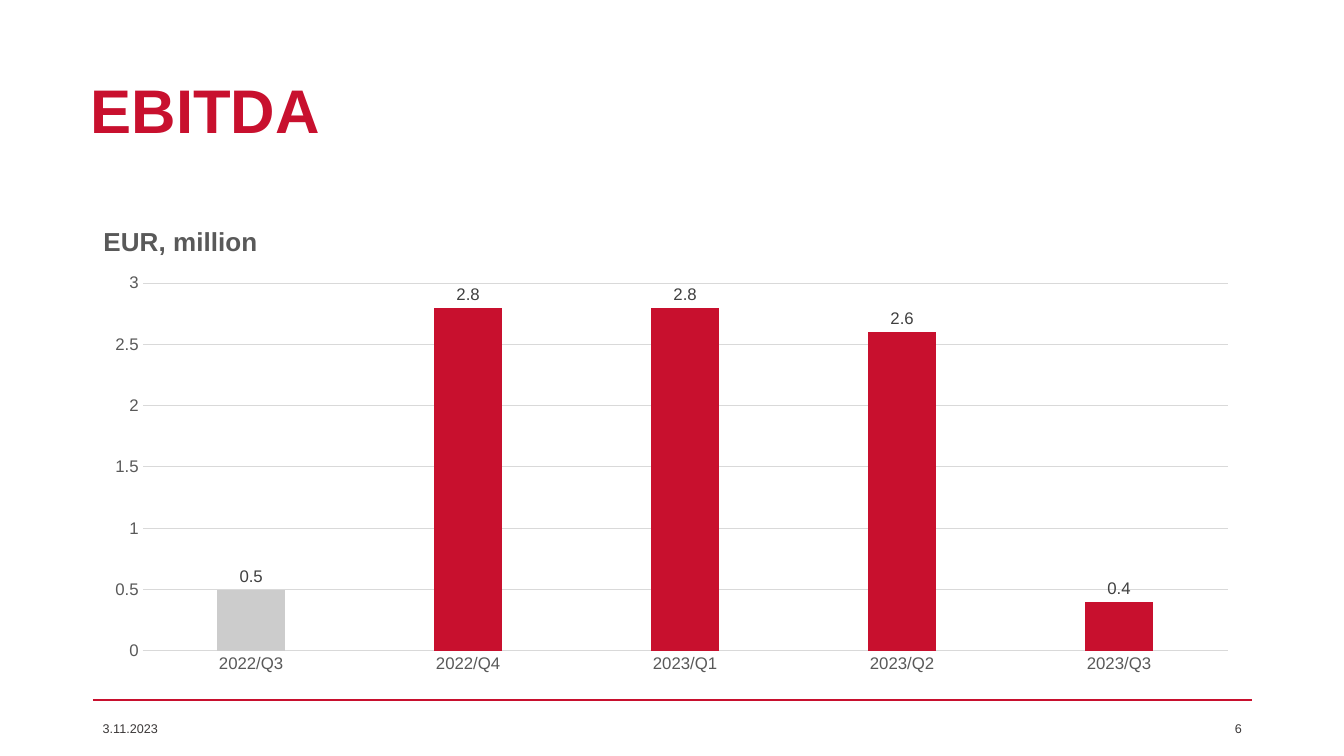
from lxml.etree import SubElement
from pptx import Presentation
from pptx.chart.data import CategoryChartData
from pptx.dml.color import RGBColor
from pptx.enum.chart import XL_CHART_TYPE as ChartType
from pptx.enum.chart import XL_LABEL_POSITION as LabelPosition
from pptx.enum.chart import XL_TICK_MARK as TickMark
from pptx.enum.shapes import MSO_CONNECTOR as Connector
from pptx.enum.text import MSO_ANCHOR as Anchor
from pptx.enum.text import MSO_AUTO_SIZE as AutoSize
from pptx.enum.text import PP_ALIGN as Align
from pptx.oxml.ns import qn
from pptx.util import Cm, Pt

HEADING = "EBITDA"
UNIT = "EUR, million"
EBITDA = {"2022/Q3": 0.5, "2022/Q4": 2.8, "2023/Q1": 2.8, "2023/Q2": 2.6, "2023/Q3": 0.4}
FOOTER = [("3.11.2023", Align.LEFT), ("6", Align.RIGHT)]
COLORS = {"red": "C8102E", "past": "CCCCCC", "grid": "D9D9D9", "axis": "595959",
          "label": "404040", "footer": "3B3838"}
FONT = "Arial"
LEFT, WIDTH = Cm(2.34), Cm(29.21)
RULE_Y = Cm(17.63)
FOOTER_WIDTH = Cm(7.62)


def color(name):
    return RGBColor.from_string(COLORS[name])


def style(font, size, name, bold=False):
    font.name, font.size, font.bold = FONT, Pt(size), bold
    font.color.rgb = color(name)


def place(parent, index, **fractions):
    for old in parent.findall(qn("c:layout")):
        parent.remove(old)
    layout = SubElement(parent, qn("c:layout"))
    parent.insert(index, layout)
    manual = SubElement(layout, qn("c:manualLayout"))
    if "w" in fractions:
        SubElement(manual, qn("c:layoutTarget")).set("val", "inner")
    for side in "xy":
        SubElement(manual, qn(f"c:{side}Mode")).set("val", "edge")
    for side, fraction in fractions.items():
        SubElement(manual, qn(f"c:{side}")).set("val", str(fraction))


def add_heading(slide):
    heading = slide.shapes.title
    heading.left, heading.top, heading.width, heading.height = Cm(2.03), Cm(1.02), Cm(29.21), Cm(3.68)
    frame = heading.text_frame
    frame.text = HEADING
    frame.auto_size, frame.vertical_anchor = AutoSize.NONE, Anchor.MIDDLE
    paragraph = frame.paragraphs[0]
    paragraph.alignment, paragraph.line_spacing = Align.LEFT, 0.9
    style(paragraph.runs[0].font, 44, "red", True)


def add_footer(slide):
    rule = slide.shapes.add_connector(Connector.STRAIGHT, LEFT, RULE_Y, LEFT + WIDTH, RULE_Y)
    rule.line.color.rgb, rule.line.width = color("red"), Pt(1.25)
    SubElement(rule._element.spPr, qn("a:effectLst"))
    for column, (text, alignment) in enumerate(FOOTER):
        left = LEFT + column * (WIDTH - FOOTER_WIDTH)
        frame = slide.shapes.add_textbox(left, Cm(17.65), FOOTER_WIDTH, Cm(1.4)).text_frame
        frame.text = text
        frame.word_wrap, frame.vertical_anchor = True, Anchor.MIDDLE
        frame.paragraphs[0].alignment = alignment
        style(frame.paragraphs[0].runs[0].font, 9, "footer")


def add_ebitda_chart(slide):
    quarters = CategoryChartData()
    quarters.categories = list(EBITDA)
    quarters.add_series("Series 1", list(EBITDA.values()))
    chart = slide.shapes.add_chart(
        ChartType.COLUMN_CLUSTERED, LEFT, Cm(5.16), WIDTH, Cm(12.04), quarters).chart
    style(chart.font, 12, "axis")
    chart.has_legend = False

    unit = chart.chart_title
    unit.text_frame.text = UNIT
    style(unit.text_frame.paragraphs[0].runs[0].font, 18.6, "axis", True)
    place(unit._element, 1, x=0.005, y=0.03)
    place(chart._chartSpace.chart.plotArea, 0, x=0.043, y=0.164, w=0.936, h=0.77)

    for axis in (chart.category_axis, chart.value_axis):
        axis.major_tick_mark = axis.minor_tick_mark = TickMark.NONE
        style(axis.tick_labels.font, 12, "axis")
    values = chart.value_axis
    values.minimum_scale, values.maximum_scale, values.major_unit = 0, 3, 0.5
    values.tick_labels.number_format = "General"
    values.tick_labels.number_format_is_linked = False
    values.format.line.fill.background()
    for line in (chart.category_axis.format.line, values.major_gridlines.format.line):
        line.color.rgb, line.width = color("grid"), Pt(0.75)

    plot = chart.plots[0]
    plot.gap_width, plot.overlap, plot.vary_by_categories = 219, -27, False
    bars = plot.series[0]
    for fill, name in ((bars.format.fill, "red"), (bars.points[0].format.fill, "past")):
        fill.solid()
        fill.fore_color.rgb = color(name)
    labels = bars.data_labels
    labels.show_value, labels.position = True, LabelPosition.OUTSIDE_END
    style(labels.font, 12, "label")


def main():
    deck = Presentation()
    deck.slide_width, deck.slide_height = Cm(33.87), Cm(19.05)
    slide = deck.slides.add_slide(deck.slide_layouts[5])
    add_heading(slide)
    add_footer(slide)
    add_ebitda_chart(slide)
    deck.save("out.pptx")


if __name__ == "__main__":
    main()
